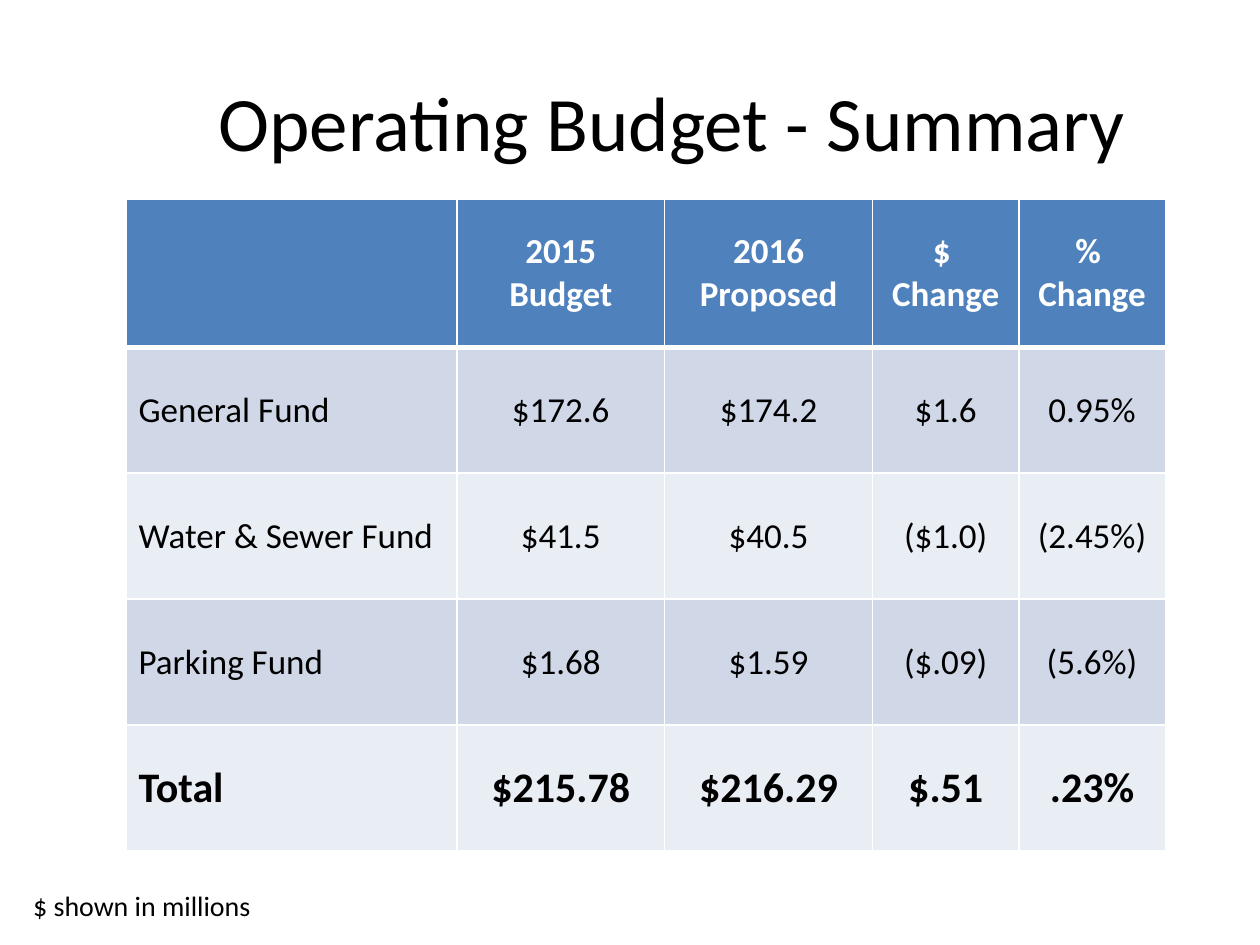
"""Build the operating budget summary slide."""
import pptx
import pptx.util
import pptx.oxml
import pptx.dml.color
import pptx.enum.text
from pptx.oxml.ns import nsdecls

Cm, Pt = pptx.util.Cm, pptx.util.Pt
RGB = pptx.dml.color.RGBColor
ALIGN = pptx.enum.text.PP_ALIGN
ANCHOR = pptx.enum.text.MSO_ANCHOR

BLACK = RGB(0x00, 0x00, 0x00)
WHITE = RGB(0xFF, 0xFF, 0xFF)
BLUE = RGB(0x4F, 0x81, 0xBD)
BANDS = RGB(0xE9, 0xED, 0xF4), RGB(0xD0, 0xD8, 0xE8)

TITLE = "Operating Budget - Summary"
NOTE = "$ shown in millions"
ROWS = [
    ("", "2015\nBudget", "2016 Proposed", "$ \nChange", "% \nChange"),
    ("General Fund", "$172.6", "$174.2", "$1.6", "0.95%"),
    ("Water & Sewer Fund", "$41.5", "$40.5", "($1.0)", "(2.45%)"),
    ("Parking Fund", "$1.68", "$1.59", "($.09)", "(5.6%)"),
    ("Total", "$215.78", "$216.29", "$.51", ".23%"),
]
WIDTHS = 6.67, 4.19, 4.19, 2.95, 2.95
HEIGHTS = 2.98, 2.54, 2.54, 2.54, 2.54

HEAD = {"size": Pt(20), "bold": True}
BODY = {"size": Pt(20), "bold": False}
TOTAL = {"size": Pt(24), "bold": True}


def write(frame, text, form, color, align):
    """Put formatted text into a frame."""
    frame.text = text
    for para in frame.paragraphs:
        para.alignment = align
        for key, value in {"name": "Calibri", **form}.items():
            setattr(para.font, key, value)
        para.font.color.rgb = color


def label(slide, box, text, size, align, anchor):
    """Add a wrapped text box."""
    frame = slide.shapes.add_textbox(*map(Cm, box)).text_frame
    frame.word_wrap = True
    frame.vertical_anchor = anchor
    write(frame, text, {"size": Pt(size)}, BLACK, align)


def edge(cell, row):
    """Draw white cell borders, thick under the header."""
    props = cell._tc.get_or_add_tcPr()
    thick = {("B", 0): 3, ("T", 1): 3}
    for side in "LRTB":
        width = Pt(thick.get((side, row), 1))
        props.append(pptx.oxml.parse_xml(
            f'<a:ln{side} {nsdecls("a")} w="{width}"><a:solidFill>'
            f'<a:srgbClr val="{WHITE}"/></a:solidFill></a:ln{side}>'))


def grid(slide):
    """Add the budget table."""
    size = map(Cm, (2.54, 4.02, sum(WIDTHS), sum(HEIGHTS)))
    table = slide.shapes.add_table(len(ROWS), len(WIDTHS), *size).table
    for col, width in zip(table.columns, WIDTHS):
        col.width = Cm(width)
    forms = [HEAD, BODY, BODY, BODY, TOTAL]
    for r, (texts, form) in enumerate(zip(ROWS, forms)):
        table.rows[r].height = Cm(HEIGHTS[r])
        for c, text in enumerate(texts):
            cell = table.cell(r, c)
            align = ALIGN.CENTER if c else ALIGN.LEFT
            write(cell.text_frame, text, form, BLACK if r else WHITE, align)
            cell.vertical_anchor = ANCHOR.MIDDLE
            edge(cell, r)
            cell.fill.solid()
            cell.fill.fore_color.rgb = BANDS[r % 2] if r else BLUE


def main():
    """Build and save the deck."""
    deck = pptx.Presentation()
    deck.slide_width, deck.slide_height = Cm(25.4), Cm(19.05)
    slide = deck.slides.add_slide(deck.slide_layouts[6])
    label(slide, (2.12, 0.85, 22.86, 3.18), TITLE, 44,
          ALIGN.CENTER, ANCHOR.MIDDLE)
    grid(slide)
    label(slide, (0.42, 17.78, 6.56, 0.94), NOTE, 16,
          ALIGN.LEFT, ANCHOR.TOP)
    deck.save("out.pptx")


if __name__ == "__main__":
    main()
